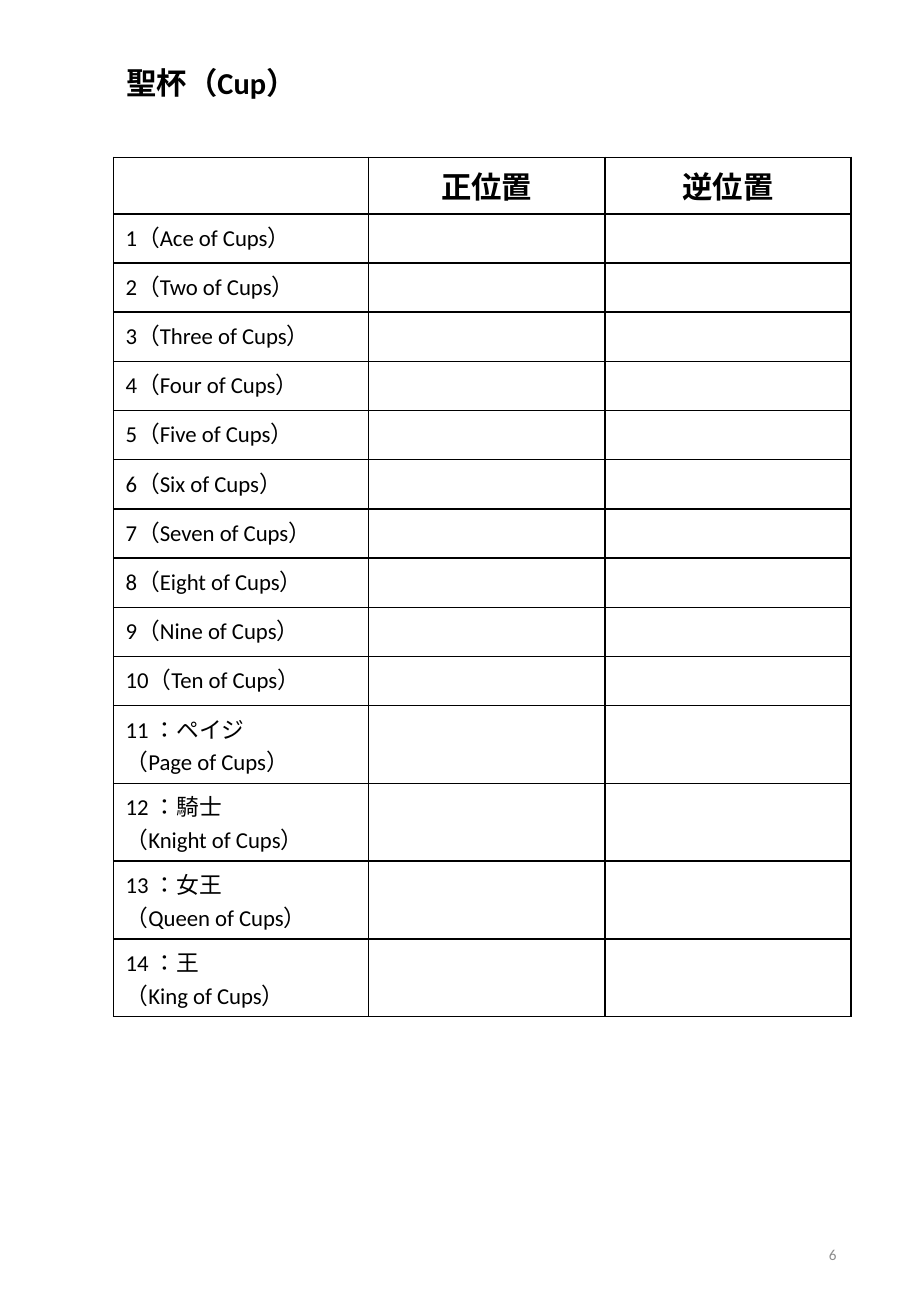
from dataclasses import dataclass

import pptx
import pptx.dml.color
import pptx.enum.lang
import pptx.enum.text
import pptx.oxml
import pptx.oxml.ns
import pptx.util

PX_EMU = 4572
TITLE_ONLY_LAYOUT = 5
ALIGN = pptx.enum.text.PP_ALIGN
ANCHOR = pptx.enum.text.MSO_ANCHOR
FIT = pptx.enum.text.MSO_AUTO_SIZE
JAPANESE = pptx.enum.lang.MSO_LANGUAGE_ID.JAPANESE


@dataclass(frozen=True)
class Theme:
    font: str = "Calibri"
    ink: str = "000000"
    muted: str = "8C8C8C"
    heading_pt: float = 18
    card_pt: float = 13.5
    page_pt: float = 9
    border_pt: float = 1


@dataclass(frozen=True)
class Box:
    left: int
    top: int
    width: int
    height: int

    def emu(self) -> tuple[int, int, int, int]:
        return px(self.left), px(self.top), px(self.width), px(self.height)


@dataclass(frozen=True)
class Card:
    rank: str
    court: str = ""

    def label(self, number: int) -> str:
        english = f"（{self.rank} of Cups）"
        return f"{number} ：{self.court}\n{english}" if self.court else f"{number}{english}"

    def row_height(self) -> int:
        return COURT_ROW_HEIGHT if self.court else PIP_ROW_HEIGHT


THEME = Theme()
PAGE = Box(0, 0, 1500, 2166)
HEADING = Box(188, 96, 588, 80)
PAGE_NUMBER = Box(1059, 2006, 338, 116)
TABLE_LEFT, TABLE_TOP = 187, 259
HEADER_ROW_HEIGHT, PIP_ROW_HEIGHT, COURT_ROW_HEIGHT = 93, 81, 128
COLUMN_WIDTHS = (420, 389, 405)
COLUMN_HEADINGS = ("", "正位置", "逆位置")
PIP_RANKS = ("Ace", "Two", "Three", "Four", "Five", "Six", "Seven", "Eight", "Nine", "Ten")
CARDS = [Card(rank) for rank in PIP_RANKS] + [
    Card("Page", "ペイジ"),
    Card("Knight", "騎士"),
    Card("Queen", "女王"),
    Card("King", "王"),
]


def px(length: int) -> int:
    return pptx.util.Emu(length * PX_EMU)


def write(frame, text: str, size: float, color: str, align, bold: bool = False) -> None:
    frame.text = text
    for paragraph in frame.paragraphs:
        paragraph.alignment = align
        for run in paragraph.runs:
            run.font.name = THEME.font
            run.font.size = pptx.util.Pt(size)
            run.font.bold = bold
            run.font.language_id = JAPANESE
            run.font.color.rgb = pptx.dml.color.RGBColor.from_string(color)


def outline_cell(cell) -> None:
    cell.fill.background()
    properties = cell._tc.get_or_add_tcPr()
    width = pptx.util.Pt(THEME.border_pt)
    for position, side in enumerate(("lnL", "lnR", "lnT", "lnB")):
        border = pptx.oxml.parse_xml(
            f'<a:{side} {pptx.oxml.ns.nsdecls("a")} w="{width}">'
            f'<a:solidFill><a:srgbClr val="{THEME.ink}"/></a:solidFill></a:{side}>'
        )
        properties.insert(position, border)


def add_heading(slide) -> None:
    heading = slide.shapes.title
    heading.left, heading.top, heading.width, heading.height = HEADING.emu()
    frame = heading.text_frame
    frame.word_wrap = True
    frame.auto_size = FIT.SHAPE_TO_FIT_TEXT
    frame.vertical_anchor = ANCHOR.TOP
    write(frame, "聖杯（Cup）", THEME.heading_pt, THEME.ink, ALIGN.LEFT, bold=True)


def add_card_table(slide) -> None:
    row_heights = [HEADER_ROW_HEIGHT] + [card.row_height() for card in CARDS]
    bounds = Box(TABLE_LEFT, TABLE_TOP, sum(COLUMN_WIDTHS), sum(row_heights))
    table = slide.shapes.add_table(len(row_heights), len(COLUMN_WIDTHS), *bounds.emu()).table
    table.first_row = False
    table.horz_banding = False
    for column, width in zip(table.columns, COLUMN_WIDTHS):
        column.width = px(width)
    for row, height in zip(table.rows, row_heights):
        row.height = px(height)
    for cell in table.iter_cells():
        outline_cell(cell)
    for index, text in enumerate(COLUMN_HEADINGS):
        write(table.cell(0, index).text_frame, text, THEME.heading_pt, THEME.ink, ALIGN.CENTER, bold=True)
    for number, card in enumerate(CARDS, start=1):
        write(table.cell(number, 0).text_frame, card.label(number), THEME.card_pt, THEME.ink, ALIGN.LEFT)


def add_page_number(slide) -> None:
    frame = slide.shapes.add_textbox(*PAGE_NUMBER.emu()).text_frame
    frame.word_wrap = True
    frame.vertical_anchor = ANCHOR.MIDDLE
    write(frame, "6", THEME.page_pt, THEME.muted, ALIGN.RIGHT)


def main() -> None:
    deck = pptx.Presentation()
    deck.slide_width, deck.slide_height = px(PAGE.width), px(PAGE.height)
    slide = deck.slides.add_slide(deck.slide_layouts[TITLE_ONLY_LAYOUT])
    add_heading(slide)
    add_card_table(slide)
    add_page_number(slide)
    deck.save("out.pptx")


if __name__ == "__main__":
    main()
